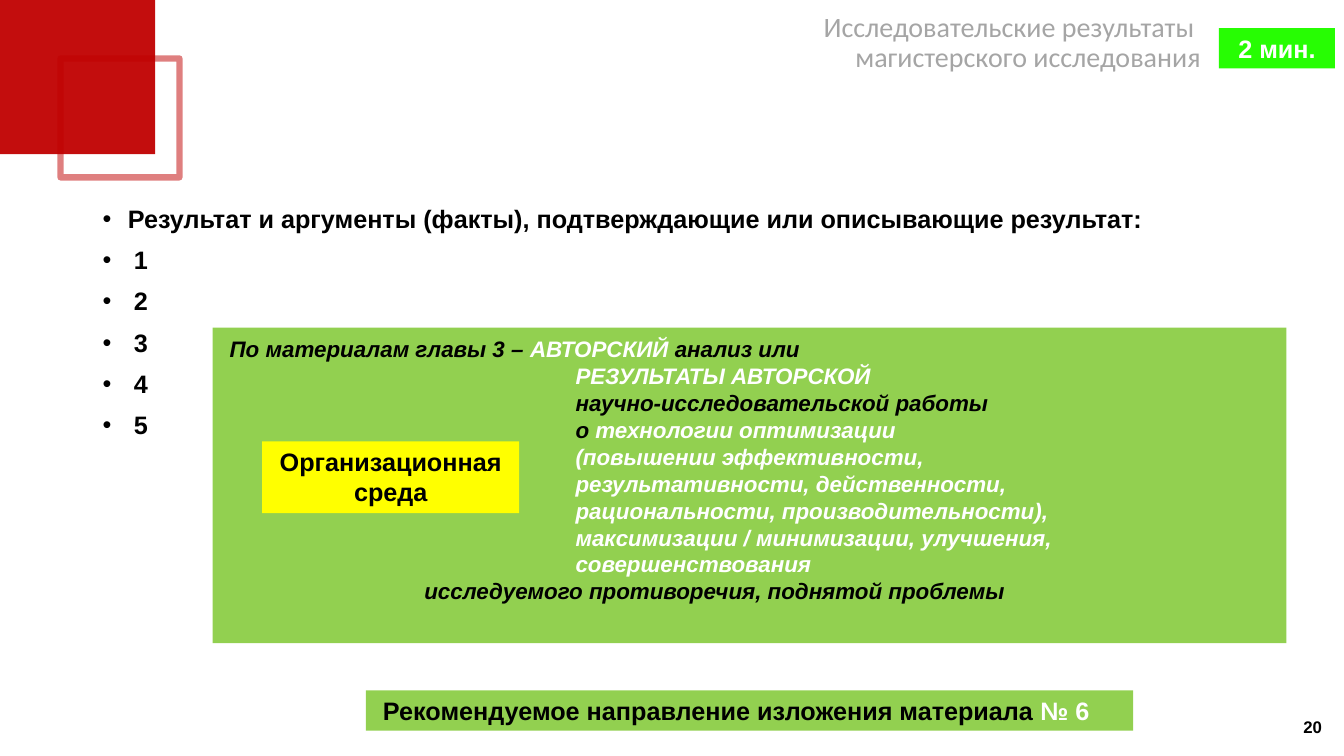
import pptx
import pptx.util
import pptx.dml.color
import pptx.enum.shapes
import pptx.enum.text
import pptx.oxml.ns
from dataclasses import dataclass
from lxml import etree

Inches = pptx.util.Inches
Pt = pptx.util.Pt
ALIGN = pptx.enum.text.PP_ALIGN
ANCHOR = pptx.enum.text.MSO_ANCHOR
qn = pptx.oxml.ns.qn


@dataclass(frozen=True)
class Theme:
    red: str = "C00000"
    green: str = "92D050"
    lime: str = "27FD03"
    yellow: str = "FFFF00"
    black: str = "000000"
    white: str = "FFFFFF"
    grey: str = "A5A5A5"
    font: str = "Arial"
    title_font: str = "Calibri"
    title: int = 20
    body: int = 18
    detail: int = 16
    number: int = 12


class SlideBuilder:
    def __init__(self, prs, theme):
        self.theme = theme
        self.slide = prs.slides.add_slide(prs.slide_layouts[6])

    def set_color(self, target, color, alpha=None):
        target.rgb = pptx.dml.color.RGBColor.from_string(color)
        if alpha is not None:
            for node in target._xFill.iter(qn("a:srgbClr")):
                etree.SubElement(node, qn("a:alpha"), val=str(alpha * 1000))

    def rect(self, box, fill=None, alpha=None, line=None, width=0, line_alpha=None):
        sp = self.slide.shapes.add_shape(
            pptx.enum.shapes.MSO_SHAPE.RECTANGLE, *map(Inches, box))
        sp.shadow.inherit = False
        if fill:
            sp.fill.solid()
            self.set_color(sp.fill.fore_color, fill, alpha)
        else:
            sp.fill.background()
        if line:
            sp.line.width = Pt(width)
            sp.line.fill.solid()
            self.set_color(sp.line.fill.fore_color, line, line_alpha)
        else:
            sp.line.fill.background()
        return self.frame(sp, ANCHOR.TOP)

    def textbox(self, box, anchor=ANCHOR.TOP):
        return self.frame(self.slide.shapes.add_textbox(*map(Inches, box)), anchor)

    def frame(self, sp, anchor):
        tf = sp.text_frame
        tf.word_wrap = True
        tf.vertical_anchor = anchor
        return tf

    def paragraph(self, tf, runs, size, align=ALIGN.LEFT, indent=0, hanging=0,
                  bullet=False, spacing=None, before=0, font=None, bold=True, italic=False):
        """Fill the empty first paragraph or add one; runs are (text, colour) pairs."""
        first = not tf.paragraphs[0].runs
        p = tf.paragraphs[0] if first else tf.add_paragraph()
        p.alignment = align
        if spacing:
            p.line_spacing = spacing
        if before and not first:
            p.space_before = Pt(before)
        pPr = p._p.get_or_add_pPr()
        pPr.set("marL", str(Inches(indent)))
        pPr.set("indent", str(-Inches(hanging)))
        if bullet:
            etree.SubElement(pPr, qn("a:buFont"), typeface=self.theme.font)
            etree.SubElement(pPr, qn("a:buChar"), char="•")
        for text, color in runs:
            r = p.add_run()
            r.text = text
            r.font.name = font or self.theme.font
            r.font.size = Pt(size)
            r.font.bold = bold
            r.font.italic = italic
            self.set_color(r.font.color, color)


def main():
    theme = Theme()
    black, white = theme.black, theme.white
    prs = pptx.Presentation()
    prs.slide_width, prs.slide_height = Inches(13.33), Inches(7.5)
    s = SlideBuilder(prs, theme)

    s.rect((0.6, 0.58, 1.18, 1.18), line=theme.red, width=4.5, line_alpha=50)
    s.rect((0, -0.01, 1.54, 1.54), fill=theme.red, alpha=95)

    results = s.textbox((0.92, 2, 11.5, 4.76))
    heading = "Результат и аргументы (факты), подтверждающие или описывающие результат:"
    for text, indent in [(heading, 0.25)] + [(str(n), 0.31) for n in range(1, 6)]:
        s.paragraph(results, [(text, black)], theme.body, indent=indent,
                    hanging=indent, bullet=True, spacing=0.9, before=10)

    panel = s.rect((2.11, 3.25, 10.65, 3.13), fill=theme.green)
    panel.margin_top = Inches(0.08)
    panel_lines = [
        (0.07, [("По материалам главы 3 – ", black), ("АВТОРСКИЙ", white),
                (" анализ или", black)]),
        (3.5, [("РЕЗУЛЬТАТЫ АВТОРСКОЙ", white)]),
        (3.5, [("научно-исследовательской работы", black)]),
        (3.5, [("о ", black), ("технологии оптимизации", white)]),
        (3.5, [("(повышении эффективности,", white)]),
        (3.5, [("результативности, действенности,", white)]),
        (3.5, [("рациональности, производительности),", white)]),
        (3.5, [("максимизации / минимизации, улучшения,", white)]),
        (3.5, [("совершенствования", white)]),
        (2, [("исследуемого противоречия, поднятой проблемы", black)]),
    ]
    for indent, runs in panel_lines:
        s.paragraph(panel, runs, theme.detail, indent=indent, italic=True)

    labels = [
        ((2.6, 4.38, 2.55, 0.71), theme.yellow, "Организационная среда", black),
        ((12.09, 0.28, 1.15, 0.4), theme.lime, "2 мин.", white),
    ]
    for box, fill, text, color in labels:
        s.paragraph(s.rect(box, fill=fill), [(text, color)], theme.body, ALIGN.CENTER)

    direction = s.rect((3.63, 6.85, 7.61, 0.4), fill=theme.green)
    s.paragraph(direction, [("Рекомендуемое направление изложения материала ", black),
                            ("№ 6", white)], theme.body, indent=0.07)

    title = s.textbox((1.25, 0.13, 10.66, 0.7))
    title.margin_left = title.margin_right = title.margin_top = title.margin_bottom = 0
    for text in ("Исследовательские результаты ", "магистерского исследования"):
        s.paragraph(title, [(text, theme.grey)], theme.title, ALIGN.RIGHT,
                    spacing=0.9, font=theme.title_font, bold=False)

    number = s.textbox((10.21, 7.01, 3, 0.4), ANCHOR.MIDDLE)
    s.paragraph(number, [("20", black)], theme.number, ALIGN.RIGHT)

    prs.save("out.pptx")


if __name__ == "__main__":
    main()
